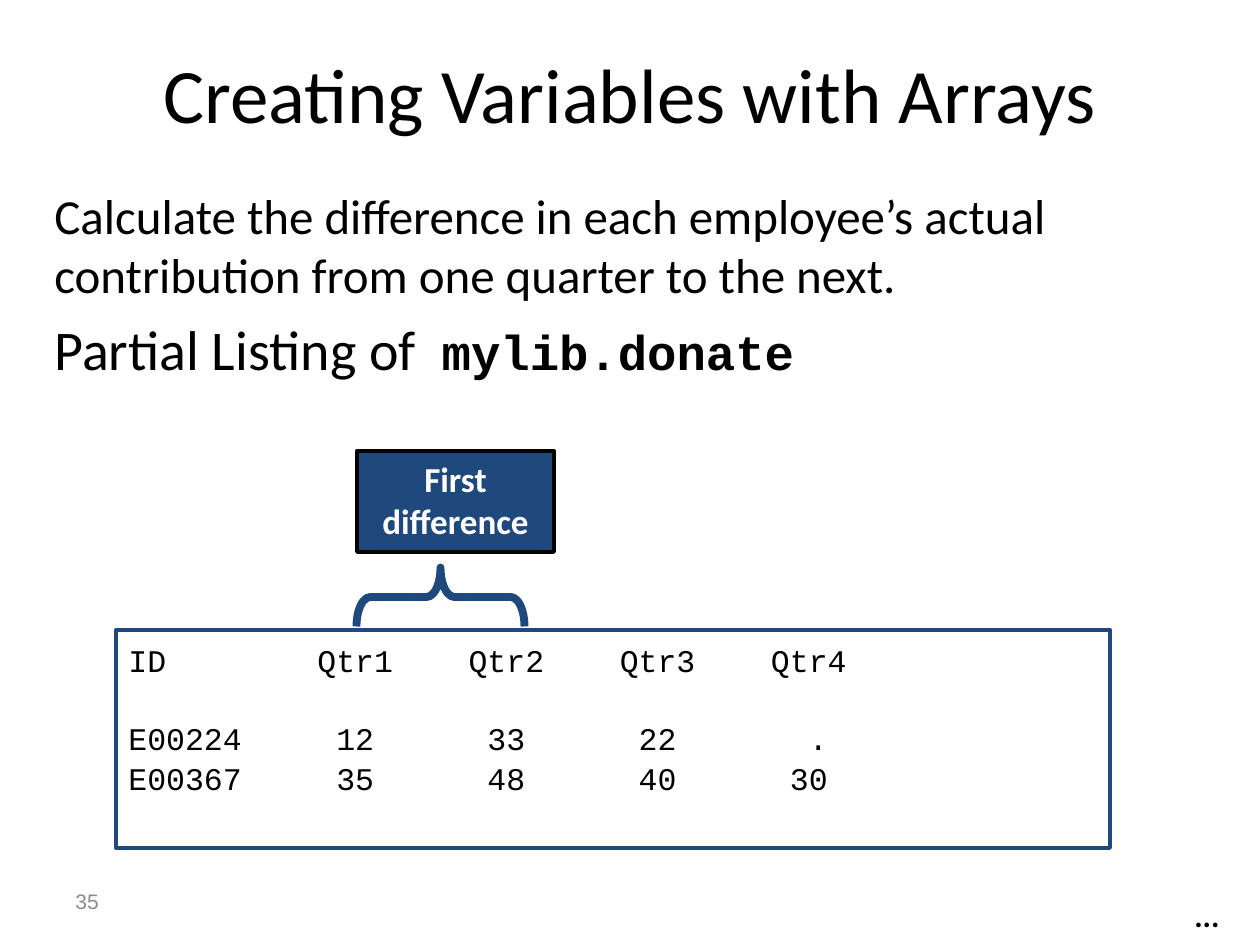
from pptx import Presentation
from pptx.dml.color import RGBColor
from pptx.enum.shapes import MSO_SHAPE as Shape
from pptx.enum.text import MSO_ANCHOR as Anchor, PP_ALIGN as Align
from pptx.util import Emu, Pt
from lxml.etree import SubElement
from pptx.oxml.ns import qn

PX = 914400 // 126
NAVY, BLACK, WHITE, GRAY = "1F497D", "000000", "FFFFFF", "8C8C8C"


def px(*lengths):
    return [Emu(n * PX) for n in lengths]


def style(font, size, color=BLACK, name="Calibri", bold=False):
    font.size, font.name, font.bold = Pt(size), name, bold
    font.color.rgb = RGBColor.from_string(color)


prs = Presentation()
prs.slide_width, prs.slide_height = px(1260, 945)
slide = prs.slides.add_slide(prs.slide_layouts[6])
shapes = slide.shapes

labels = [
    ("35", (63, 876, 294, 50), 12, GRAY, "Arial", False, Align.LEFT, Anchor.MIDDLE),
    ("Creating Variables with Arrays", (63, 38, 1134, 110), 44, BLACK, "Calibri", False,
     Align.CENTER, Anchor.MIDDLE),
    ("...", (1182, 890, 60, 63), 18, BLACK, "Calibri", True, Align.LEFT, Anchor.TOP),
]
for text, place, size, color, name, bold, align, anchor in labels:
    frame = shapes.add_textbox(*px(*place)).text_frame
    frame.word_wrap = True
    frame.vertical_anchor = anchor
    line = frame.paragraphs[0]
    line.text, line.alignment = text, align
    style(line.font, size, color, name, bold)

body = shapes.add_textbox(*px(42, 179, 1166, 588)).text_frame
body.word_wrap = True
task = body.paragraphs[0]
task.text = "Calculate the difference in each employee’s actual contribution from one quarter to the next."
style(task.font, 28)
caption = body.add_paragraph()
caption.space_before = Pt(6.4)
for text, size, name, bold in [("Partial Listing of  ", 32, "Calibri", False),
                               ("mylib.donate", 28, "Courier New", True)]:
    run = caption.add_run()
    run.text = text
    style(run.font, size, BLACK, name, bold)

listing = shapes.add_shape(Shape.RECTANGLE, *px(116, 630, 994, 218))
brace = shapes.add_shape(Shape.LEFT_BRACE, *px(411, 513, 59, 168))
brace.rotation = 90
brace.adjustments[0] = 0.234
callout = shapes.add_shape(Shape.RECTANGLE, *px(357, 451, 197, 101))
for shape, fill, outline, width in [(listing, WHITE, NAVY, 2.25), (brace, None, NAVY, 4.5),
                                    (callout, NAVY, BLACK, 2.25)]:
    shape.shadow.inherit = False
    if fill:
        shape.fill.solid()
        shape.fill.fore_color.rgb = RGBColor.from_string(fill)
    else:
        shape.fill.background()
    shape.line.color.rgb = RGBColor.from_string(outline)
    shape.line.width = Pt(width)

rows = [
    ("ID", "Qtr1", "Qtr2", "Qtr3", "Qtr4"),
    ("E00224", "12", "33", "22", "."),
    ("E00367", "35", "48", "40", "30"),
]
table = listing.text_frame
table.word_wrap = False
table.vertical_anchor = Anchor.TOP
table.margin_top, = px(9)
char_width = Pt(10.8)
for i, row in enumerate(rows):
    line = table.add_paragraph() if i else table.paragraphs[0]
    line.text = "\t".join(row)
    line.alignment = Align.LEFT
    line.line_spacing = 1.06
    if i == 1:
        line.space_before = Pt(21.7)
    style(line.font, 18, BLACK, "Courier New")
    first_end = 13 if i else 14
    stops = SubElement(line._p.get_or_add_pPr(), qn("a:tabLst"))
    line._p.pPr.insert_element_before(stops, "a:defRPr", "a:extLst")
    for quarter in range(4):
        SubElement(stops, qn("a:tab"), algn="r",
                   pos=str(char_width * (first_end + 8 * quarter)))

note = callout.text_frame
note.word_wrap = False
note.vertical_anchor = Anchor.TOP
note.text = "First\ndifference"
for line in note.paragraphs:
    line.alignment = Align.CENTER
    style(line.font, 20, WHITE, bold=True)

prs.save("out.pptx")
